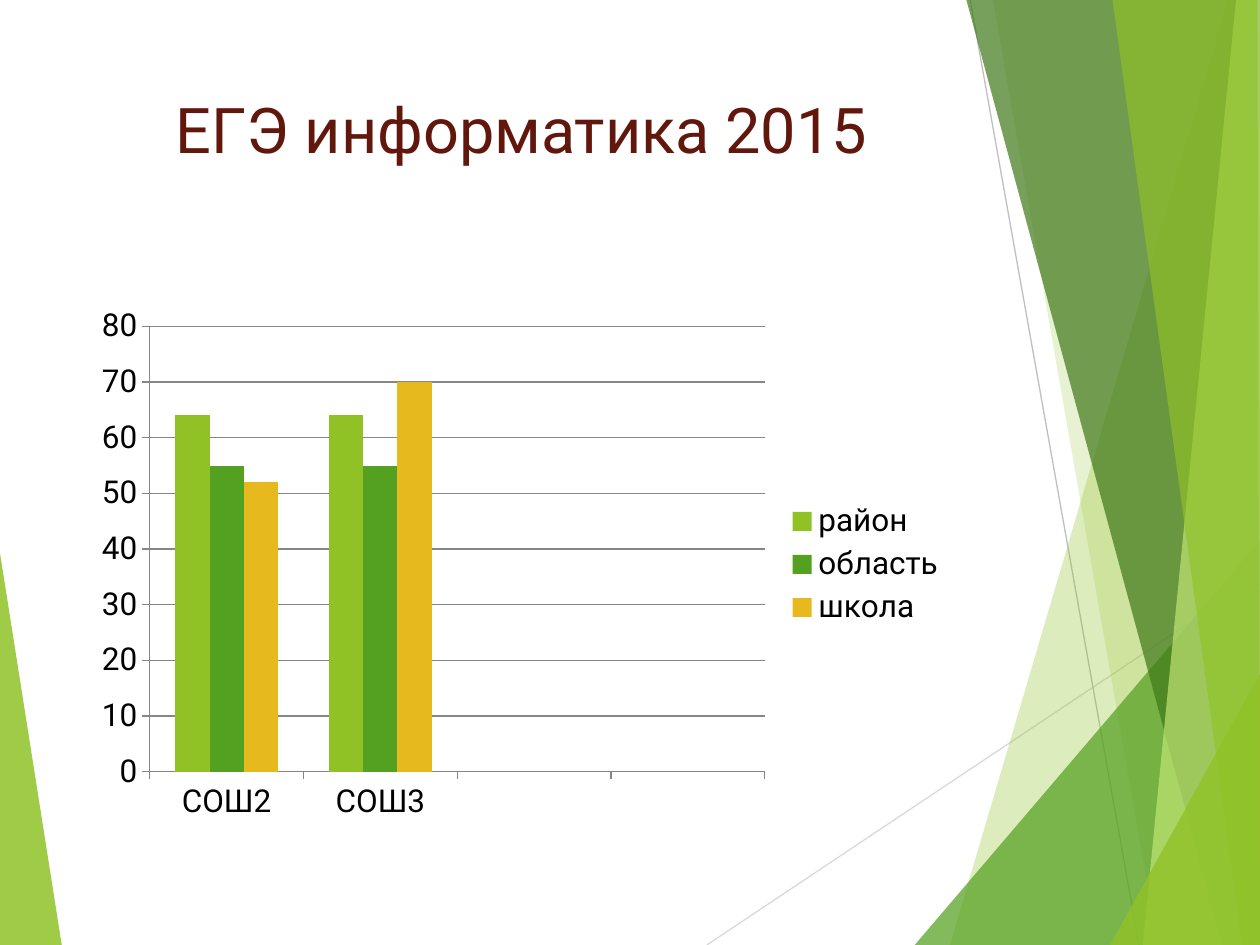
from lxml import etree
from pptx import Presentation
from pptx import util as u
from pptx.chart import data
from pptx.dml import color
from pptx.enum import chart as ch, shapes, text
from pptx.oxml import ns

W, H = 10, 7.5
FONT = "Roboto"
TITLE = "ЕГЭ информатика 2015"
CATS = ["СОШ2", "СОШ3", "", ""]
SERIES = [
    ("район", "90C226", [64, 64, None, None]),
    ("область", "54A021", [55, 55, None, None]),
    ("школа", "E6B91E", [52, 70, None, None]),
]
LEFT, WIDE = 0.67, 6.94

# Facets: colour, opacity in percent, corners
WEDGE = ("90C226", 85, [(0, 4.39), (0.49, H), (0, H)])
RAYS = [("D9D9D9", (5.61, H), (W, 4.57)), ("BFBFBF", (7.7, 0), (9.04, H))]
FACETS = [
    ("90C226", 30, [(9.75, 0), (7.54, H), (W, H), (W, 0)]),
    ("90C226", 20, [(7.88, 0), (9.19, H), (W, H), (W, 0)]),
    ("54A021", 72, [(7.26, H), (W, 4.29), (W, H)]),
    ("3F7819", 70, [(7.67, 0), (9.7, H), (W, H), (W, 0)]),
    ("C0E474", 70, [(9.81, 0), (9.07, H), (W, H), (W, 0)]),
    ("90C226", 65, [(8.83, 0), (9.86, H), (W, H), (9.98, 0)]),
    ("90C226", 80, [(8.81, H), (W, 5.35), (W, H)]),
]

deck = Presentation()
deck.slide_width, deck.slide_height = u.Inches(W), u.Inches(H)
slide = deck.slides.add_slide(deck.slide_layouts[6])


def rgb(code):
    return color.RGBColor.from_string(code)


def box(*sizes):
    return [u.Inches(s) for s in sizes]


def facet(code, alpha, pts):
    """Draw a translucent polygon."""
    pts = [box(*p) for p in pts]
    form = slide.shapes.build_freeform(*pts[0])
    form.add_line_segments(pts[1:], close=True)
    shape = form.convert_to_shape()
    shape.shadow.inherit = False
    shape.line.fill.background()
    shape.fill.solid()
    shape.fill.fore_color.rgb = rgb(code)
    clr = shape._element.spPr.find(".//" + ns.qn("a:srgbClr"))
    etree.SubElement(clr, ns.qn("a:alpha")).set("val", str(alpha * 1000))


def ray(code, start, end):
    line = slide.shapes.add_connector(
        shapes.MSO_CONNECTOR.STRAIGHT, *box(*start, *end))
    line.line.color.rgb = rgb(code)
    line.line.width = u.Pt(0.75)
    etree.SubElement(line._element.spPr, ns.qn("a:effectLst"))


def style(font, size, code):
    font.name, font.size = FONT, u.Pt(size)
    font.color.rgb = rgb(code)


def write(words, place, size, code, align):
    frame = slide.shapes.add_textbox(*box(*place)).text_frame
    frame.word_wrap = True
    para = frame.paragraphs[0]
    para.alignment = align
    run = para.add_run()
    run.text = words
    style(run.font, size, code)


def rule(fmt):
    fmt.line.color.rgb = rgb("868686")
    fmt.line.width = u.Pt(0.75)


def plot(place):
    info = data.CategoryChartData()
    info.categories = CATS
    for name, _, vals in SERIES:
        info.add_series(name, vals)
    chart = slide.shapes.add_chart(
        ch.XL_CHART_TYPE.COLUMN_CLUSTERED, *box(*place), info).chart
    style(chart.font, 18, "000000")
    chart.has_title = False
    chart.has_legend = True
    chart.legend.position = ch.XL_LEGEND_POSITION.RIGHT
    chart.legend.include_in_layout = False
    bars = chart.plots[0]
    bars.gap_width, bars.overlap = 150, 0
    bars.vary_by_categories = False
    for item, (_, code, _) in zip(bars.series, SERIES):
        item.format.fill.solid()
        item.format.fill.fore_color.rgb = rgb(code)
        item.invert_if_negative = False
    for axis in (chart.category_axis, chart.value_axis):
        axis.major_tick_mark = ch.XL_TICK_MARK.OUTSIDE
        rule(axis.format)
    axis = chart.value_axis
    axis.minimum_scale, axis.maximum_scale, axis.major_unit = 0, 80, 10
    axis.has_major_gridlines = True
    rule(axis.major_gridlines.format)


facet(*WEDGE)
for item in RAYS:
    ray(*item)
for item in FACETS:
    facet(*item)
write(TITLE, (LEFT, 0.67, WIDE, 1.44), 36, "62170D", text.PP_ALIGN.CENTER)
plot((LEFT, 2.36, WIDE, 4.24))
deck.save("out.pptx")
